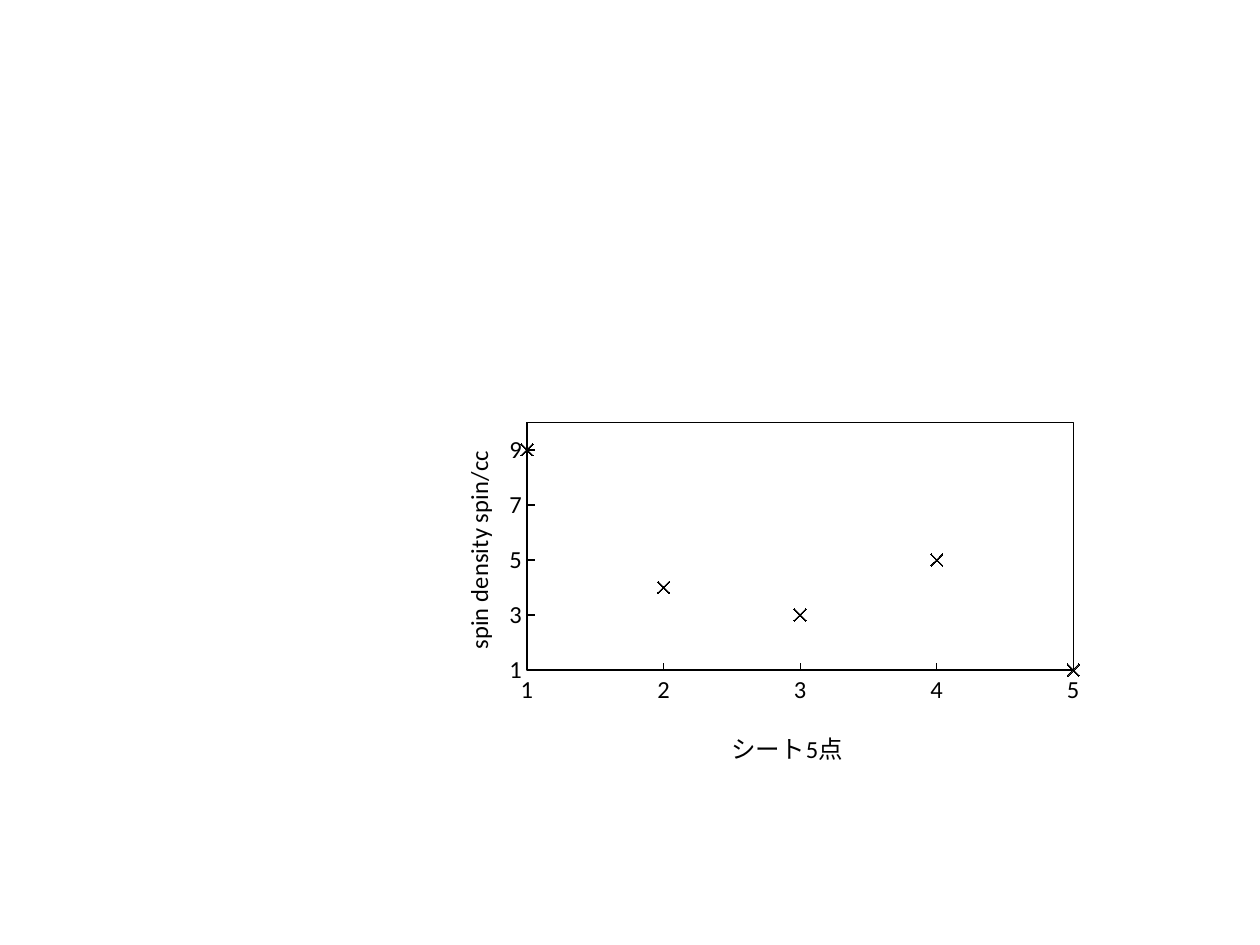
from lxml.etree import SubElement
from pptx import Presentation
from pptx.chart.data import XyChartData
from pptx.dml.color import RGBColor
from pptx.enum.chart import XL_CHART_TYPE, XL_MARKER_STYLE, XL_TICK_MARK
from pptx.oxml import parse_xml
from pptx.oxml.ns import nsdecls, qn
from pptx.util import Pt

BLACK = RGBColor(0, 0, 0)
FONT = "Calibri"
LINE_WIDTH = Pt(0.75)

POINTS = [(1, 9), (2, 4), (3, 3), (4, 5), (5, 1)]
CHART_BOX = (219.6, 202.3, 416.2, 257)
# Positions inside the chart are fractions of its width and height.
PLOT_BOX = {"x": 0.196, "y": 0.152, "w": 0.75, "h": 0.551}
X_AXIS = {
    "title": "シート5点", "title_at": {"x": 0.47, "y": 0.82}, "rotation": 0,
    "format": {"minimum_scale": 1, "maximum_scale": 5, "major_unit": 1},
}
Y_AXIS = {
    "title": "spin density spin/cc", "title_at": {"x": 0.1, "y": 0.205},
    "rotation": -5400000,
    "format": {"minimum_scale": 1, "maximum_scale": 10, "major_unit": 2},
}
AXIS_FORMAT = {
    "has_major_gridlines": False, "has_minor_gridlines": False,
    "major_tick_mark": XL_TICK_MARK.INSIDE, "minor_tick_mark": XL_TICK_MARK.NONE,
}


def set_attributes(obj, values):
    for name, value in values.items():
        setattr(obj, name, value)


def set_font(font, size):
    set_attributes(font, {"name": FONT, "size": Pt(size), "bold": False})
    font.color.rgb = BLACK


def set_layout(layout, box, inner=False):
    """Fix a chart part at fractions of the chart area."""
    for child in list(layout):
        layout.remove(child)
    manual = SubElement(layout, qn("c:manualLayout"))
    values = {"layoutTarget": "inner"} if inner else {}
    values |= {"xMode": "edge", "yMode": "edge", **box}
    for tag, value in values.items():
        SubElement(manual, qn(f"c:{tag}")).set("val", str(value))


def format_axis(axis, content):
    set_attributes(axis, AXIS_FORMAT | content["format"])
    set_attributes(axis.tick_labels,
                   {"number_format": "General", "number_format_is_linked": False})
    set_font(axis.tick_labels.font, 14)
    axis.format.line.color.rgb = BLACK
    axis.format.line.width = LINE_WIDTH

    title = axis.axis_title
    tf = title.text_frame
    r = tf.paragraphs[0].add_run()
    r.text = content["title"]
    set_font(r.font, 14)
    body = tf._txBody.find(qn("a:bodyPr"))
    body.set("rot", str(content["rotation"]))
    body.set("vert", "horz")
    set_layout(title._element.find(qn("c:layout")), content["title_at"])


def format_plot_area(chart):
    area = chart._chartSpace.chart.plotArea
    layout = area.find(qn("c:layout"))
    if layout is None:
        layout = parse_xml(f"<c:layout {nsdecls('c')}/>")
        area.insert(0, layout)
    set_layout(layout, PLOT_BOX, inner=True)
    area.append(parse_xml(
        f"<c:spPr {nsdecls('c', 'a')}><a:noFill/><a:ln w='{LINE_WIDTH}'>"
        f"<a:solidFill><a:srgbClr val='{BLACK}'/></a:solidFill></a:ln></c:spPr>"))


def format_series(series):
    series.format.line.fill.background()
    set_attributes(series.marker, {"style": XL_MARKER_STYLE.X, "size": 7})
    series.marker.format.fill.background()
    series.marker.format.line.color.rgb = BLACK


def main():
    prs = Presentation()
    prs.slide_width, prs.slide_height = Pt(720), Pt(540)
    s = prs.slides.add_slide(prs.slide_layouts[6])

    data = XyChartData()
    series = data.add_series("Series 1")
    for x, y in POINTS:
        series.add_data_point(x, y)
    chart = s.shapes.add_chart(
        XL_CHART_TYPE.XY_SCATTER, *map(Pt, CHART_BOX), data).chart
    set_attributes(chart, {"has_title": False, "has_legend": False})
    set_font(chart.font, 18)
    chart.plots[0].vary_by_categories = False

    format_series(chart.plots[0].series[0])
    format_axis(chart.category_axis, X_AXIS)
    format_axis(chart.value_axis, Y_AXIS)
    format_plot_area(chart)
    prs.save("out.pptx")


if __name__ == "__main__":
    main()
